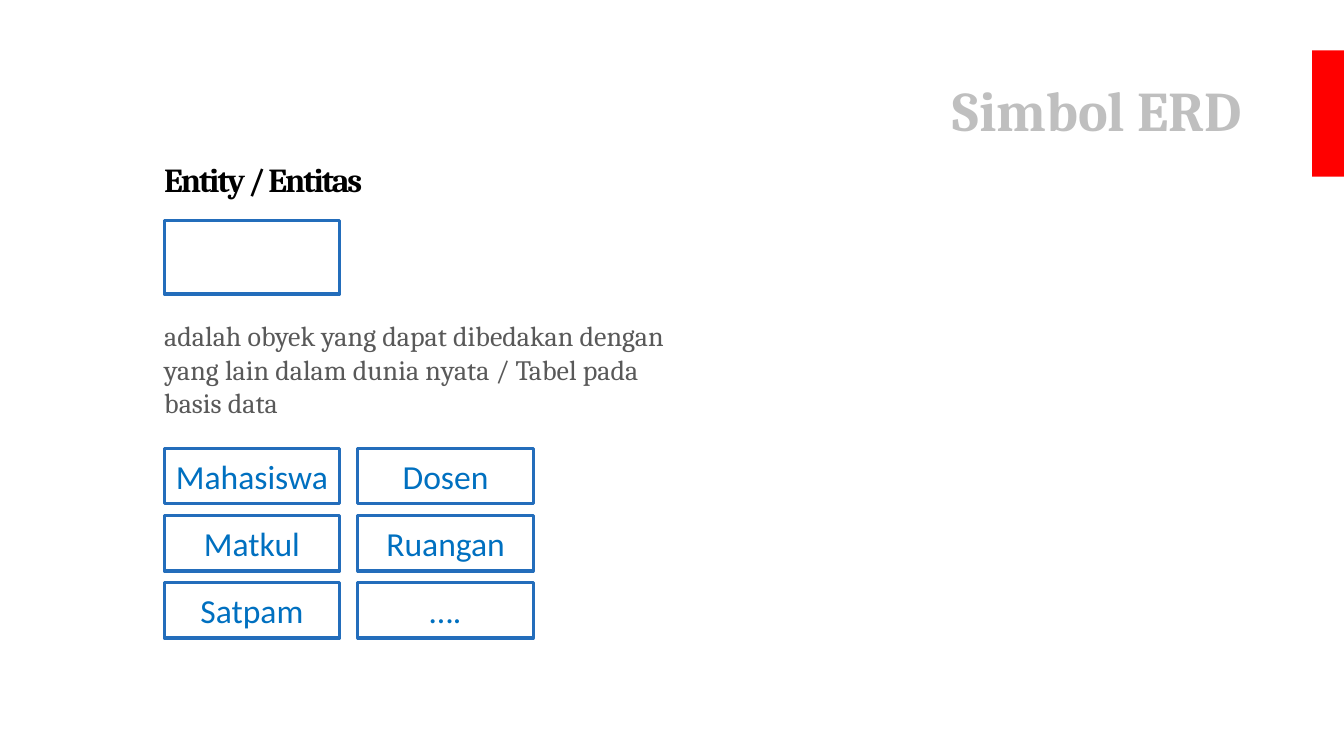
from dataclasses import dataclass

from pptx import Presentation
from pptx.dml.color import RGBColor
from pptx.enum.shapes import MSO_SHAPE
from pptx.enum.text import MSO_ANCHOR, MSO_AUTO_SIZE, PP_ALIGN
from pptx.util import Cm, Pt

RECTANGLE = MSO_SHAPE.RECTANGLE
MIDDLE = MSO_ANCHOR.MIDDLE
NO_AUTOFIT = MSO_AUTO_SIZE.NONE
LEFT, CENTER, RIGHT = PP_ALIGN.LEFT, PP_ALIGN.CENTER, PP_ALIGN.RIGHT
TITLE_ONLY = 5


@dataclass(frozen=True)
class Theme:
    serif: str = "Cambria"
    sans: str = "Calibri"
    title_color: str = "BFBFBF"
    heading_color: str = "000000"
    body_color: str = "595959"
    entity_color: str = "0070C0"
    outline_color: str = "236DBB"
    accent_color: str = "FF0000"
    title_size: float = 40
    heading_size: float = 24
    body_size: float = 20
    entity_size: float = 24
    outline_width: float = 2.25


class SlideBuilder:
    def __init__(self, slide, theme):
        self.slide = slide
        self.theme = theme

    def add_text(self, frame, text, font, size, color, align=LEFT, bold=False):
        paragraph = frame.paragraphs[0]
        paragraph.alignment = align
        run = paragraph.add_run()
        run.text = text
        run.font.name = font
        run.font.size = Pt(size)
        run.font.bold = bold
        run.font.color.rgb = RGBColor.from_string(color)
        return run

    def title(self, text, left, top, width, height):
        title = self.slide.shapes.title
        title.left, title.top = Cm(left), Cm(top)
        title.width, title.height = Cm(width), Cm(height)
        frame = title.text_frame
        frame.auto_size = NO_AUTOFIT
        frame.vertical_anchor = MIDDLE
        frame.paragraphs[0].line_spacing = 0.9
        self.add_text(frame, text, self.theme.serif, self.theme.title_size,
                      self.theme.title_color, RIGHT, bold=True)

    def text_box(self, left, top, width, height):
        box = self.slide.shapes.add_textbox(Cm(left), Cm(top), Cm(width), Cm(height))
        box.text_frame.word_wrap = True
        return box.text_frame

    def heading(self, text, *bounds):
        run = self.add_text(self.text_box(*bounds), text, self.theme.serif,
                            self.theme.heading_size, self.theme.heading_color, bold=True)
        run._r.get_or_add_rPr().set("spc", "-150")

    def description(self, text, *bounds):
        self.add_text(self.text_box(*bounds), text, self.theme.serif,
                      self.theme.body_size, self.theme.body_color)

    def rectangle(self, left, top, width, height):
        rectangle = self.slide.shapes.add_shape(
            RECTANGLE, Cm(left), Cm(top), Cm(width), Cm(height))
        rectangle.shadow.inherit = False
        return rectangle

    def accent_bar(self, *bounds):
        bar = self.rectangle(*bounds)
        bar.fill.solid()
        bar.fill.fore_color.rgb = RGBColor.from_string(self.theme.accent_color)
        bar.line.fill.background()

    def entity(self, name, *bounds):
        """Draw an outlined ERD entity; an empty name gives the bare symbol."""
        entity = self.rectangle(*bounds)
        entity.fill.background()
        entity.line.color.rgb = RGBColor.from_string(self.theme.outline_color)
        entity.line.width = Pt(self.theme.outline_width)
        if name:
            entity.text_frame.vertical_anchor = MIDDLE
            self.add_text(entity.text_frame, name, self.theme.sans,
                          self.theme.entity_size, self.theme.entity_color, CENTER)


def main():
    presentation = Presentation()
    presentation.slide_width, presentation.slide_height = Cm(33.87), Cm(19.05)
    slide = presentation.slides.add_slide(presentation.slide_layouts[TITLE_ONLY])
    builder = SlideBuilder(slide, Theme())

    text_left, entity_left, entity_width = 3.89, 4.14, 4.42
    builder.title("Simbol ERD", 2.34, 1.02, 29.21, 3.68)
    builder.accent_bar(33.07, 1.27, 0.8, 3.18)
    builder.heading("Entity / Entitas", text_left, 3.89, 8.94, 1.27)
    builder.entity("", entity_left, 5.56, entity_width, 1.85)
    builder.description(
        "adalah obyek yang dapat dibedakan dengan yang lain dalam dunia nyata "
        "/ Tabel pada basis data", text_left, 7.9, 13.67, 2.82)

    examples = [("Mahasiswa", "Dosen"), ("Matkul", "Ruangan"), ("Satpam", "….")]
    examples_top, column_step, row_step = 11.3, 4.88, 1.69
    for row, names in enumerate(examples):
        for column, name in enumerate(names):
            builder.entity(name, entity_left + column * column_step,
                           examples_top + row * row_step, entity_width, 1.4)

    presentation.save("out.pptx")


if __name__ == "__main__":
    main()
